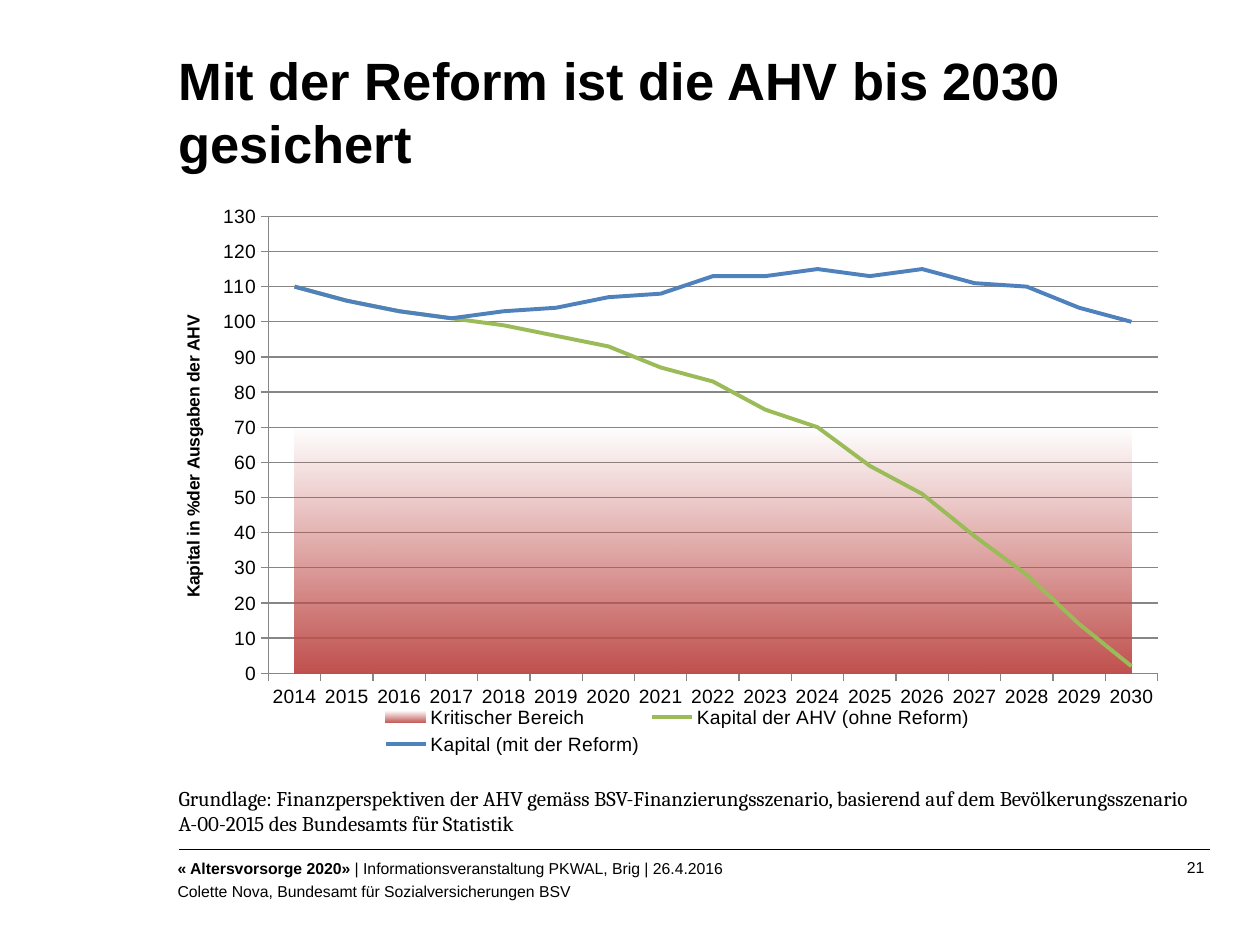
"""Builds the slide on the AHV capital with and without the reform."""
from lxml import etree
from pptx import Presentation
from pptx import util as u
from pptx.chart.data import CategoryChartData
from pptx.dml.color import RGBColor
from pptx.enum import chart as ch, shapes, text
from pptx.oxml.ns import qn

TITLE = "Mit der Reform ist die AHV bis 2030 gesichert"
SOURCE = ("Grundlage: Finanzperspektiven der AHV gemäss BSV-Finanzierungsszenario, "
          "basierend auf dem Bevölkerungsszenario A-00-2015 des Bundesamts für Statistik")
EVENT = ("« Altersvorsorge 2020» ", "| Informationsveranstaltung PKWAL, Brig | 26.4.2016")
SPEAKER = "Colette Nova, Bundesamt für Sozialversicherungen BSV"
PAGE = "21"
AXIS_TITLE = "Kapital in %der Ausgaben der AHV"
YEARS = [str(year) for year in range(2014, 2031)]
CRITICAL = ("Kritischer Bereich", [70] * len(YEARS))
WITHOUT = ("Kapital der AHV (ohne Reform)",
           [110, 106, 103, 101, 99, 96, 93, 87, 83, 75, 70, 59, 51, 39, 28, 14, 2])
WITH = ("Kapital (mit der Reform)",
        [110, 106, 103, 101, 103, 104, 107, 108, 113, 113, 115, 113, 115, 111, 110, 104, 100])
COLORS = {"text": "000000", "grid": "868686", "critical": "C0504D",
          "without": "9BBB59", "with": "4F81BD"}
PLOT = {"x": 0.09, "y": 0.032, "w": 0.891, "h": 0.813}
LEFT, WIDTH = 3.6, 20.8


def color(key):
    return RGBColor.from_string(COLORS[key])


def style(font, size, bold=False, name="Arial"):
    font.name, font.size, font.bold = name, u.Pt(size), bold
    font.color.rgb = color("text")


def frame_of(box, inset=0, anchor=text.MSO_ANCHOR.TOP):
    frame = box.text_frame
    frame.word_wrap, frame.vertical_anchor = True, anchor
    frame.auto_size = text.MSO_AUTO_SIZE.NONE
    frame.margin_left = frame.margin_right = 0
    frame.margin_top = frame.margin_bottom = u.Cm(inset)
    return frame


def add_frame(slide, left, top, width, height, inset=0):
    return frame_of(slide.shapes.add_textbox(*map(u.Cm, (left, top, width, height))), inset)


def sub(parent, tag, val=None):
    return etree.SubElement(parent, qn(tag), {} if val is None else {"val": str(val)})


def split_area(chart):
    """Moves the first series of the line chart into an area chart behind it."""
    plot_area = chart._chartSpace.chart.plotArea
    lines = plot_area.find(qn("c:lineChart"))
    critical = lines.find(qn("c:ser"))
    for tag in ("c:marker", "c:smooth"):
        for item in critical.findall(qn(tag)):
            critical.remove(item)
    area = etree.Element(qn("c:areaChart"))
    sub(area, "c:grouping", "standard")
    sub(area, "c:varyColors", 0)
    area.append(critical)
    for axis in lines.findall(qn("c:axId")):
        sub(area, "c:axId", axis.get("val"))
    lines.addprevious(area)

    for old in plot_area.findall(qn("c:layout")):
        plot_area.remove(old)
    layout = etree.Element(qn("c:layout"))
    plot_area.insert(0, layout)
    manual = sub(layout, "c:manualLayout")
    sub(manual, "c:layoutTarget", "inner")
    for side in "xy":
        sub(manual, f"c:{side}Mode", "edge")
    for side, share in PLOT.items():
        sub(manual, f"c:{side}", share)

    value_axis = plot_area.find(qn("c:valAx"))
    between = value_axis.find(qn("c:crossBetween"))
    if between is None:
        between = etree.Element(qn("c:crossBetween"))
        value_axis.find(qn("c:crosses")).addnext(between)
    between.set("val", "between")


def add_capital_chart(slide):
    data = CategoryChartData(number_format="0")
    data.categories = YEARS
    for name, values in (CRITICAL, WITHOUT, WITH):
        data.add_series(name, values)
    chart = slide.shapes.add_chart(ch.XL_CHART_TYPE.LINE, u.Cm(LEFT), u.Cm(4),
                                   u.Cm(20.12), u.Cm(11.33), data).chart
    style(chart.font, 11)
    chart.has_title = False
    chart.has_legend = True
    chart.legend.position = ch.XL_LEGEND_POSITION.BOTTOM
    chart.legend.include_in_layout = False
    split_area(chart)

    area, lines = chart.plots
    fill = area.series[0].format.fill
    fill.gradient()
    fill.gradient_angle = 90
    for stop, position in zip(fill.gradient_stops, (0, 1)):
        stop.color.rgb, stop.position = color("critical"), position
    fade = area.series[0]._element.findall(".//" + qn("a:srgbClr"))[-1]
    sub(fade, "a:alpha", 0)
    lines.vary_by_categories = False
    for series, key in zip(lines.series, ("without", "with")):
        series.smooth = False
        series.marker.style = ch.XL_MARKER_STYLE.NONE
        series.format.line.width = u.Pt(2.25)
        series.format.line.color.rgb = color(key)

    years, share = chart.category_axis, chart.value_axis
    share.minimum_scale, share.maximum_scale, share.major_unit = 0, 130, 10
    share.has_major_gridlines = True
    share.tick_labels.number_format = "#,##0"
    share.tick_labels.number_format_is_linked = False
    share.axis_title.text_frame.text = AXIS_TITLE
    style(share.axis_title.text_frame.paragraphs[0].runs[0].font, 10, True)
    for axis in (years, share):
        axis.major_tick_mark = ch.XL_TICK_MARK.OUTSIDE
        axis.minor_tick_mark = ch.XL_TICK_MARK.NONE
    for part in (years, share, share.major_gridlines):
        part.format.line.color.rgb = color("grid")
        part.format.line.width = u.Pt(0.75)


def add_footer(slide):
    rule = slide.shapes.add_connector(shapes.MSO_CONNECTOR.STRAIGHT, u.Cm(LEFT + WIDTH),
                                      u.Cm(17.12), u.Cm(LEFT), u.Cm(17.12))
    rule.line.color.rgb, rule.line.width = color("text"), u.Pt(0.75)
    sub(rule._element.spPr, "a:effectLst")

    footer = add_frame(slide, 3.58, 17.32, 18.95, 1.19)
    event, speaker = footer.paragraphs[0], footer.add_paragraph()
    for part, bold in zip(EVENT, (True, False)):
        run = event.add_run()
        run.text = part
        style(run.font, 9, bold)
    speaker.text = SPEAKER
    style(speaker.runs[0].font, 9)
    event.space_after = speaker.space_before = u.Pt(1)

    page = add_frame(slide, 23.29, 17.3, 0.99, 0.41).paragraphs[0]
    page.text, page.alignment = PAGE, text.PP_ALIGN.RIGHT
    style(page.runs[0].font, 9)


def main():
    deck = Presentation()
    deck.slide_width, deck.slide_height = u.Cm(25.4), u.Cm(19.05)
    slide = deck.slides.add_slide(deck.slide_layouts[5])

    title = slide.shapes.title
    title.left, title.top, title.width, title.height = map(u.Cm, (LEFT, 0.84, WIDTH, 2.8))
    heading = frame_of(title, anchor=text.MSO_ANCHOR.MIDDLE).paragraphs[0]
    heading.text, heading.alignment = TITLE, text.PP_ALIGN.LEFT
    heading.line_spacing = u.Pt(36)
    style(heading.runs[0].font, 30, True)

    add_capital_chart(slide)
    source = add_frame(slide, LEFT, 15.7, WIDTH, 1.27, 0.13).paragraphs[0]
    source.text = SOURCE
    style(source.runs[0].font, 12, name="Cambria")
    add_footer(slide)
    deck.save("out.pptx")


if __name__ == "__main__":
    main()
